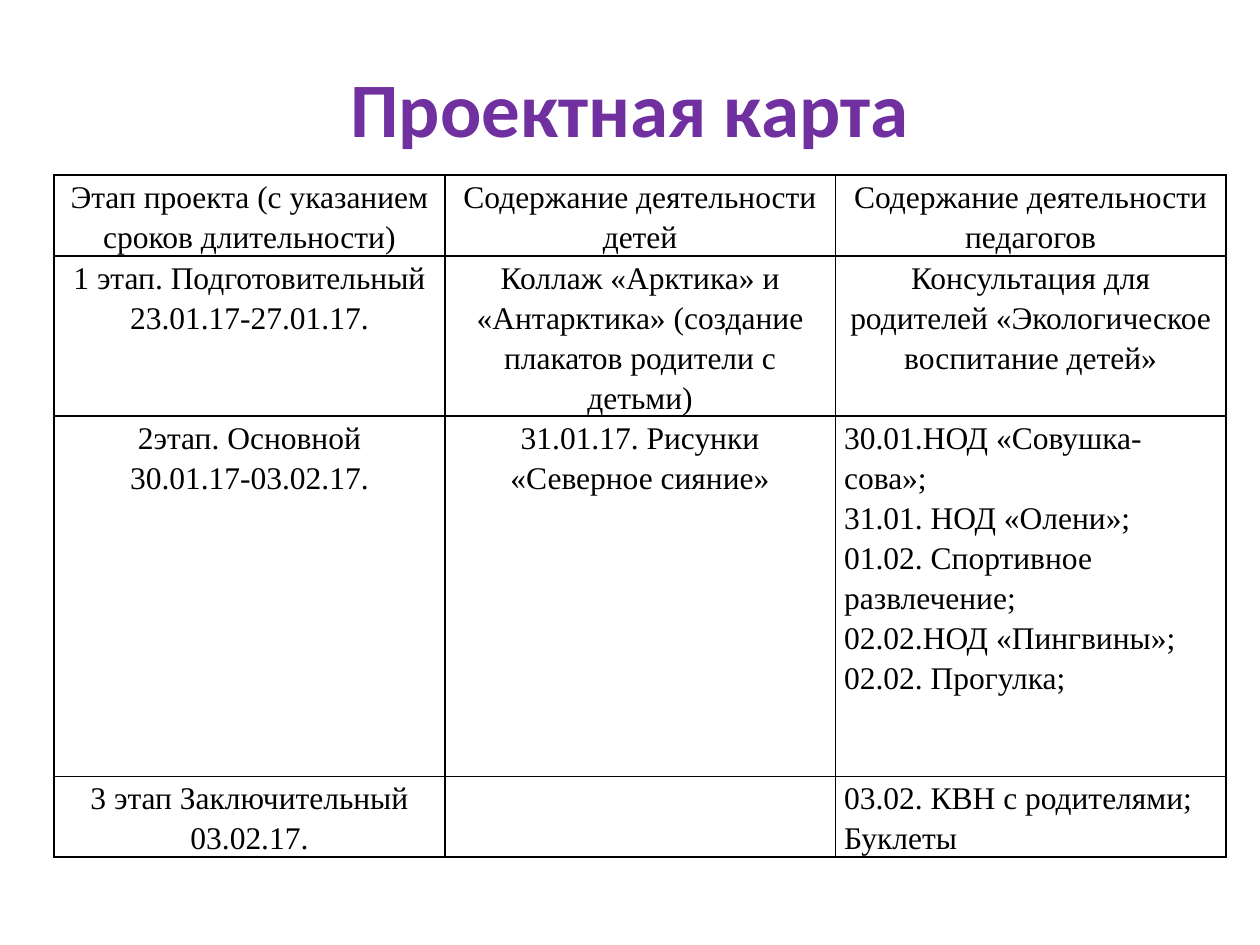
from dataclasses import dataclass

from lxml import etree
from pptx import Presentation
from pptx.dml.color import RGBColor
from pptx.enum.text import MSO_ANCHOR, PP_ALIGN
from pptx.oxml.ns import qn
from pptx.util import Inches, Pt

LEFT, CENTER = PP_ALIGN.LEFT, PP_ALIGN.CENTER
MIDDLE = MSO_ANCHOR.MIDDLE
TITLE_ONLY = 5


@dataclass(frozen=True)
class Theme:
    head_font: str = "Calibri"
    head_size: int = 44
    head_color: str = "7030A0"
    body_font: str = "Times New Roman"
    body_size: int = 18
    ink: str = "000000"
    rule: int = 1
    leading: float = 1.15
    pad: float = 0.07


THEME = Theme()
TITLE_BOX = (0.5, 0.3, 9, 1.09)
TABLE_AT = (0.43, 1.39)
COL_WIDTH = 3.1
ROW_HEIGHTS = (0.64, 1.27, 2.86, 0.64)

# Each cell is a list of paragraphs.
HEADER = [
    ["Этап проекта (с указанием сроков длительности)"],
    ["Содержание деятельности детей"],
    ["Содержание деятельности педагогов"],
]
STAGES = [
    [
        ["1 этап. Подготовительный", "23.01.17-27.01.17."],
        ["Коллаж «Арктика» и «Антарктика» (создание плакатов родители с детьми)"],
        ["Консультация для родителей «Экологическое воспитание детей»"],
    ],
    [
        ["2этап. Основной", "30.01.17-03.02.17."],
        ["31.01.17. Рисунки «Северное сияние»"],
        [
            "30.01.НОД «Совушка-сова»;",
            "31.01. НОД «Олени»;",
            "01.02. Спортивное развлечение;",
            "02.02.НОД «Пингвины»;",
            "02.02. Прогулка;",
        ],
    ],
    [
        ["3 этап Заключительный", "03.02.17."],
        [],
        ["03.02. КВН с родителями;", "Буклеты"],
    ],
]


def set_font(par, name, size, color, bold=False):
    font = par.font
    font.name, font.size, font.bold = name, Pt(size), bold
    font.color.rgb = RGBColor.from_string(color)


def add_title(slide, text):
    title = slide.shapes.title
    title.left, title.top, title.width, title.height = map(Inches, TITLE_BOX)
    frame = title.text_frame
    frame.text = text
    frame.vertical_anchor = MIDDLE
    par = frame.paragraphs[0]
    par.alignment = CENTER
    set_font(par, THEME.head_font, THEME.head_size, THEME.head_color, True)


def add_borders(cell):
    props = cell._tc.get_or_add_tcPr()
    for side in ("lnL", "lnR", "lnT", "lnB"):
        line = etree.SubElement(props, qn(f"a:{side}"), w=str(Pt(THEME.rule)))
        fill = etree.SubElement(line, qn("a:solidFill"))
        etree.SubElement(fill, qn("a:srgbClr"), val=THEME.ink)


def fill_cell(cell, lines, align):
    add_borders(cell)
    cell.fill.background()
    cell.margin_left = cell.margin_right = Inches(THEME.pad)
    cell.margin_top = cell.margin_bottom = 0
    cell.text = "\n".join(lines)
    for par in cell.text_frame.paragraphs:
        par.alignment = align
        par.line_spacing = THEME.leading
        set_font(par, THEME.body_font, THEME.body_size, THEME.ink)


def add_plan(slide, rows):
    count = len(rows[0])
    size = (COL_WIDTH * count, sum(ROW_HEIGHTS))
    table = slide.shapes.add_table(
        len(rows), count, *map(Inches, TABLE_AT + size)
    ).table
    table.first_row = table.horz_banding = False
    for col in table.columns:
        col.width = Inches(COL_WIDTH)
    for r, (row, height) in enumerate(zip(rows, ROW_HEIGHTS)):
        table.rows[r].height = Inches(height)
        for c, lines in enumerate(row):
            # The teachers' lists of events are set flush left.
            is_list = c == count - 1 and len(lines) > 1
            fill_cell(table.cell(r, c), lines, LEFT if is_list else CENTER)


def main():
    deck = Presentation()
    deck.slide_width, deck.slide_height = Inches(10), Inches(7.5)
    slide = deck.slides.add_slide(deck.slide_layouts[TITLE_ONLY])
    add_title(slide, "Проектная карта")
    add_plan(slide, [HEADER, *STAGES])
    deck.save("out.pptx")


if __name__ == "__main__":
    main()
